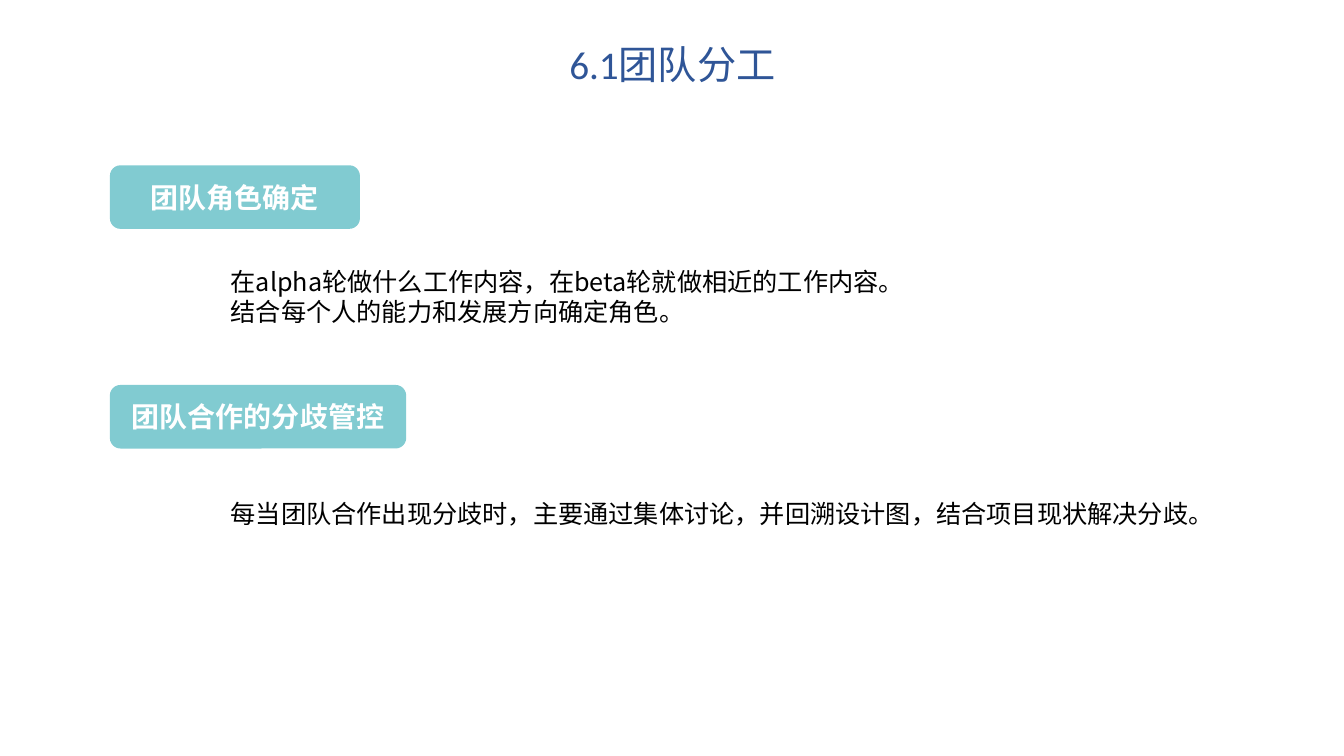
from lxml.etree import SubElement
from pptx import Presentation
from pptx.dml.color import RGBColor
from pptx.enum.shapes import MSO_SHAPE as Shape
from pptx.enum.text import MSO_ANCHOR as Anchor, MSO_AUTO_SIZE as AutoSize, PP_ALIGN as Align
from pptx.oxml.ns import qn
from pptx.util import Pt

CJK_FONT = "Noto Sans CJK SC"


def color(hex_text):
    return RGBColor.from_string(hex_text)


def write(shape, text, size, fill, font=CJK_FONT, bold=False,
          align=Align.LEFT, anchor=Anchor.TOP, spacing=1.0):
    """Fill a shape with one paragraph per line of text."""
    frame = shape.text_frame
    frame.word_wrap = True
    frame.auto_size = AutoSize.NONE
    frame.vertical_anchor = anchor
    frame.text = text
    for para in frame.paragraphs:
        para.alignment = align
        para.line_spacing = spacing
        for span in para.runs:
            span.font.size = Pt(size)
            span.font.bold = bold
            span.font.color.rgb = color(fill)
            span.font.name = font
            SubElement(span.font._element, qn("a:ea"), typeface=CJK_FONT)


deck = Presentation()
deck.slide_width, deck.slide_height = Pt(960), Pt(540)
page = deck.slides.add_slide(deck.slide_layouts[5])

title = page.shapes.title
title.left, title.top, title.width, title.height = Pt(342), Pt(28.8), Pt(276.5), Pt(37.4)
write(title, "6.1团队分工", size=28, fill="2F5597", font="Calibri",
      align=Align.CENTER, anchor=Anchor.MIDDLE, spacing=0.9)

# heading, heading top, heading width, body, body top, body height
sections = [
    ("团队角色确定", 118.1, 178.6,
     "在alpha轮做什么工作内容，在beta轮就做相近的工作内容。\n结合每个人的能力和发展方向确定角色。",
     186.5, 51),
    ("团队合作的分歧管控", 275, 211.7,
     "每当团队合作出现分歧时，主要通过集体讨论，并回溯设计图，结合项目现状解决分歧。",
     352.1, 29),
]
for heading, heading_top, heading_width, body, body_top, body_height in sections:
    label = page.shapes.add_shape(Shape.ROUNDED_RECTANGLE, Pt(78.5), Pt(heading_top),
                                  Pt(heading_width), Pt(45.4))
    label.shadow.inherit = False
    label.fill.solid()
    label.fill.fore_color.rgb = color("81CBD1")
    label.line.fill.background()
    write(label, heading, size=20, fill="FFFFFF", bold=True,
          align=Align.CENTER, anchor=Anchor.MIDDLE)

    box = page.shapes.add_textbox(Pt(157.7), Pt(body_top), Pt(717.8), Pt(body_height))
    write(box, body, size=18, fill="000000")

deck.save("out.pptx")
